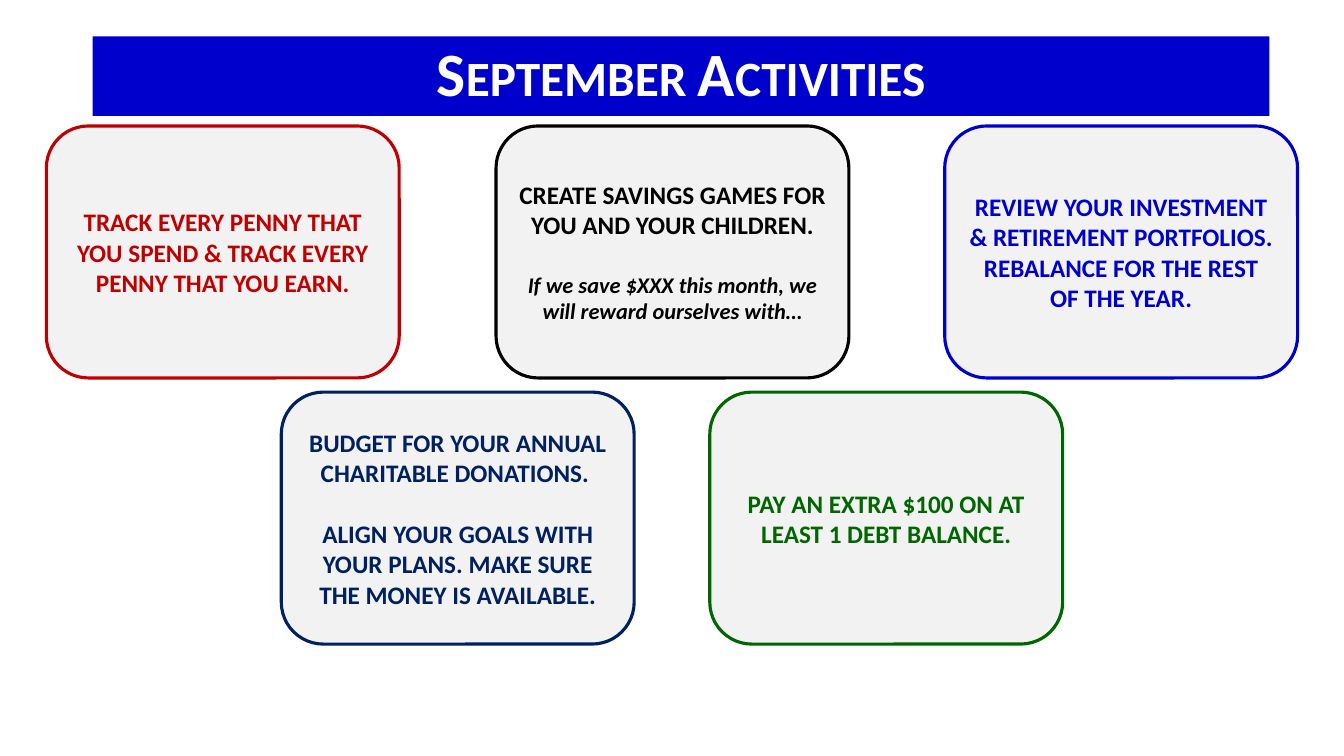
from dataclasses import dataclass

from pptx import Presentation
from pptx import util as u
from pptx.dml.color import RGBColor
from pptx.enum import shapes, text


@dataclass
class Theme:
    font: str = "Calibri"
    white: str = "FFFFFF"
    panel: str = "F2F2F2"
    red: str = "C00000"
    blue: str = "0000CC"
    black: str = "000000"
    navy: str = "002060"
    green: str = "006600"
    title: int = 44
    body: int = 18
    note: int = 16
    gap: int = 22
    edge: float = 2.25


theme = Theme()
deck = Presentation()
deck.slide_width = u.Inches(13.33)
deck.slide_height = u.Inches(7.5)
slide = deck.slides.add_slide(deck.slide_layouts[6])


def add_box(kind, left, top, width, height, fill):
    box = slide.shapes.add_shape(
        kind, u.Inches(left), u.Inches(top), u.Inches(width), u.Inches(height))
    box.shadow.inherit = False
    box.fill.solid()
    box.fill.fore_color.rgb = RGBColor.from_string(fill)
    box.text_frame.word_wrap = True
    box.text_frame.vertical_anchor = text.MSO_ANCHOR.MIDDLE
    return box


def style(para, size, color):
    para.alignment = text.PP_ALIGN.CENTER
    for run in para.runs:
        run.font.name = theme.font
        run.font.size = u.Pt(size)
        run.font.bold = True
        run.font.color.rgb = RGBColor.from_string(color)


# Title bar
bar = add_box(shapes.MSO_SHAPE.RECTANGLE, 0.92, 0.36, 11.67, 0.79, theme.blue)
bar.line.fill.background()
bar.text_frame.text = "September Activities"
head = bar.text_frame.paragraphs[0]
head.line_spacing = 0.9
style(head, theme.title, theme.white)
head.runs[0]._r.get_or_add_rPr().set("cap", "small")

# Activity cards: left, top, color, main text, second text, second is a note
upper, lower = 1.25, 3.89
cards = [
    (0.46, upper, theme.red,
     "TRACK EVERY PENNY THAT YOU SPEND & TRACK EVERY PENNY THAT YOU EARN.",
     None, False),
    (9.37, upper, theme.blue,
     "REVIEW YOUR INVESTMENT & RETIREMENT PORTFOLIOS. "
     "REBALANCE FOR THE REST OF THE YEAR.", None, False),
    (4.92, upper, theme.black,
     "CREATE SAVINGS GAMES FOR YOU AND YOUR CHILDREN.",
     "If we save $XXX this month, we will reward ourselves with…", True),
    (2.79, lower, theme.navy,
     "BUDGET FOR YOUR ANNUAL CHARITABLE DONATIONS. ",
     "ALIGN YOUR GOALS WITH YOUR PLANS. MAKE SURE THE MONEY IS AVAILABLE.",
     False),
    (7.04, lower, theme.green,
     "PAY AN EXTRA $100 ON AT LEAST 1 DEBT BALANCE.", None, False),
]

for left, top, color, main, more, is_note in cards:
    card = add_box(shapes.MSO_SHAPE.ROUNDED_RECTANGLE,
                   left, top, 3.5, 2.5, theme.panel)
    card.line.color.rgb = RGBColor.from_string(color)
    card.line.width = u.Pt(theme.edge)
    card.text_frame.text = main
    style(card.text_frame.paragraphs[0], theme.body, color)
    if more:
        para = card.text_frame.add_paragraph()
        para.text = more
        para.space_before = u.Pt(theme.gap)
        style(para, theme.note if is_note else theme.body, color)
        para.runs[0].font.italic = is_note

deck.save("out.pptx")
